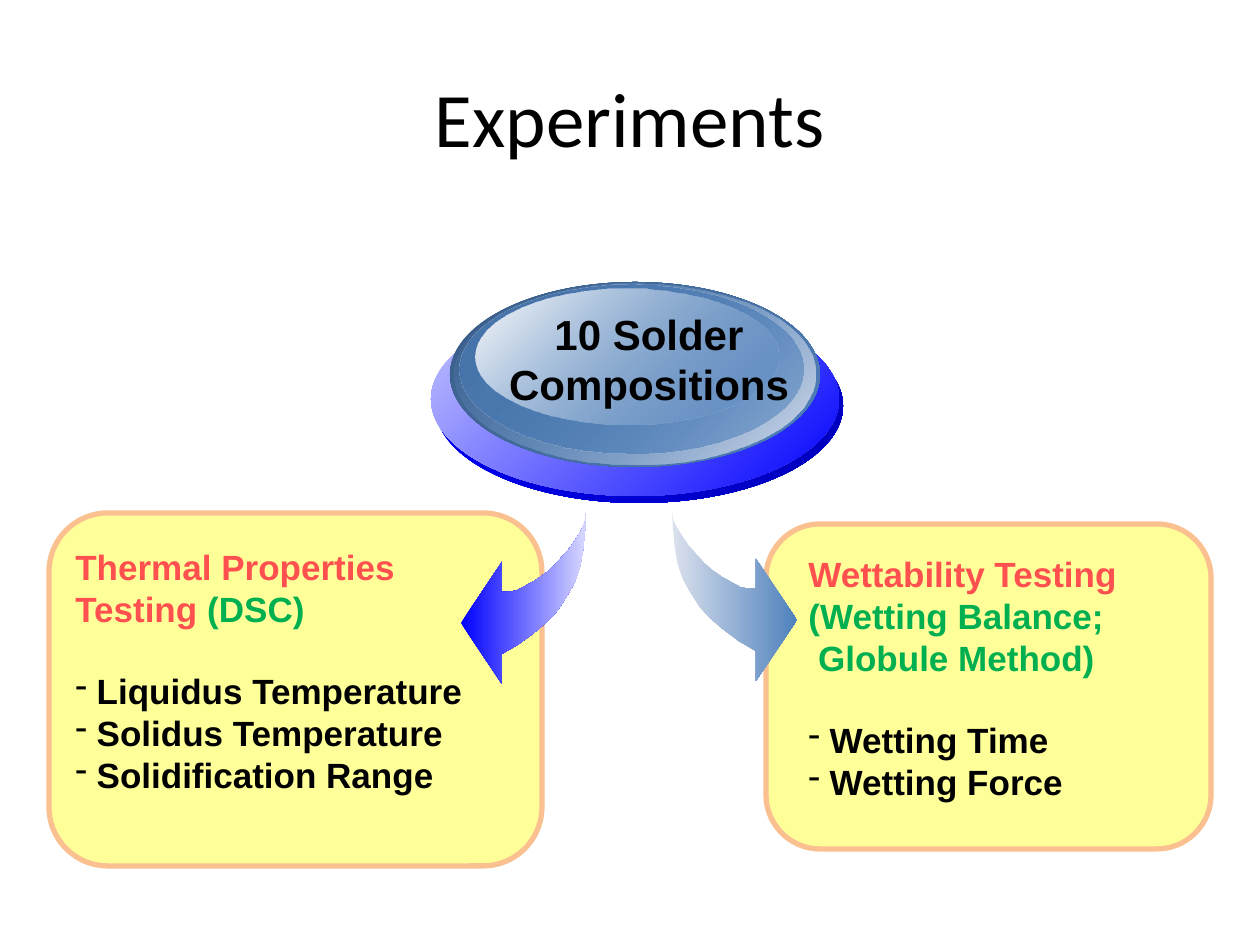
from lxml.etree import SubElement
from pptx import Presentation
from pptx.dml.color import RGBColor
from pptx.enum.shapes import MSO_SHAPE
from pptx.enum.text import MSO_ANCHOR, PP_ALIGN
from pptx.oxml.ns import qn
from pptx.util import Emu, Pt

BLACK = RGBColor(0, 0, 0)
RED = RGBColor(0xFF, 0x50, 0x50)
GREEN = RGBColor(0, 0xB0, 0x50)
YELLOW = RGBColor(0xFF, 0xFF, 0x99)
PEACH = RGBColor(0xFA, 0xC0, 0x90)
BLUE = RGBColor(0, 0, 0xFF)
NAVY = RGBColor(0, 0, 0xBA)
LILAC = RGBColor(0xC6, 0xC6, 0xFF)
PALE = RGBColor(0xD8, 0xD8, 0xFF)
STEEL = RGBColor(0x4F, 0x81, 0xBD)
SLATE = RGBColor(0x39, 0x5C, 0x87)
DENIM = RGBColor(0x47, 0x75, 0xAB)
MIST = RGBColor(0xDB, 0xE1, 0xED)
FOG = RGBColor(0xD7, 0xDE, 0xEB)
WHITE = RGBColor(0xFF, 0xFF, 0xFF)

TITLE = "Experiments"
HUB = ["10 Solder", "Compositions"]
PANELS = [
    {"frame": (49, 513, 493, 353), "text": (63, 539, 451, 299),
     "heads": [[("Thermal Properties Testing ", RED), ("(DSC)", GREEN)]],
     "items": ["Liquidus Temperature", "Solidus Temperature",
               "Solidification Range"]},
    {"frame": (766, 524, 445, 325), "text": (796, 546, 396, 276),
     "heads": [[("Wettability Testing", RED)],
               [("(Wetting Balance; \v Globule Method)", GREEN)]],
     "items": ["Wetting Time", "Wetting Force"]},
]
DISCS = [
    ((435, 309, 408, 194), (BLUE, 100), (NAVY, 100)),
    ((431, 302, 408, 194), (LILAC, 100), (BLUE, 100)),
    ((450, 282, 370, 185), (SLATE, 100), (STEEL, 100)),
    ((455, 284, 360, 180), (STEEL, 0), (FOG, 100)),
    ((459, 285, 344, 169), (DENIM, 100), (STEEL, 48)),
    ((476, 289, 302, 136), (WHITE, 100), (STEEL, 38)),
]
CURVE = [
    (0, 0), (1, 19), (3, 38), (6, 54), (11, 69), (19, 83), (28, 97),
    (38, 108), (52, 120), (67, 131), (84, 141), (84, 171), (125, 110),
    (84, 49), (84, 79), (77, 79), (68, 77), (59, 72), (50, 67), (40, 60),
    (32, 53), (24, 44), (16, 35), (10, 26), (5, 18), (1, 9),
]
ARROWS = [
    (586, 513, -1, (BLUE, 100), (PALE, 100)),
    (672, 510, 1, (MIST, 100), (STEEL, 100)),
]


def px(n):
    return Emu(round(n * 914400 / 126))


def place(box):
    return [px(n) for n in box]


def blend(shape, start, end, angle):
    shape.shadow.inherit = False
    shape.line.fill.background()
    shape.fill.gradient()
    shape.fill.gradient_angle = -angle % 360
    stops = shape.fill.gradient_stops
    for stop, spot, (color, alpha) in zip(stops, (0, 1), (start, end)):
        stop.position = spot
        stop.color.rgb = color
    tags = shape.element.spPr.iter(qn("a:srgbClr"))
    for tag, (_, alpha) in zip(tags, (start, end)):
        if alpha < 100:
            SubElement(tag, qn("a:alpha"), val=str(alpha * 1000))


def style(para, size):
    para.font.name = "Arial"
    para.font.size = Pt(size)
    para.font.bold = True


def write(frame, lines, size):
    for i, runs in enumerate(lines):
        para = frame.paragraphs[0] if i == 0 else frame.add_paragraph()
        style(para, size)
        for text, color in runs:
            for j, part in enumerate(text.split("\v")):
                if j:
                    para.add_line_break()
                run = para.add_run()
                run.text = part
                run.font.color.rgb = color
    return frame.paragraphs


def dash(para):
    props = para._p.get_or_add_pPr()
    props.set("marL", "0")
    props.set("indent", "0")
    SubElement(props, qn("a:buFontTx"))
    SubElement(props, qn("a:buChar"), char="-")


def panel(shapes, data):
    frame = shapes.add_shape(MSO_SHAPE.ROUNDED_RECTANGLE, *place(data["frame"]))
    frame.shadow.inherit = False
    frame.fill.solid()
    frame.fill.fore_color.rgb = YELLOW
    frame.line.color.rgb = PEACH
    frame.line.width = Pt(3)

    box = shapes.add_textbox(*place(data["text"]))
    box.fill.solid()
    box.fill.fore_color.rgb = YELLOW
    box.text_frame.word_wrap = True
    heads = data["heads"]
    lines = heads + [[(" " + item, BLACK)] for item in data["items"]]
    items = write(box.text_frame, lines, 20)[len(heads):]
    items[0].space_before = Pt(23)
    for para in items:
        dash(para)


def arrow(shapes, left, top, side, start, end):
    points = [(px(left + side * x), px(top + y)) for x, y in CURVE]
    path = shapes.build_freeform(*points[0])
    path.add_line_segments(points[1:], close=True)
    blend(path.convert_to_shape(), start, end, 0)


def hub(shapes):
    for box, start, end in DISCS:
        disc = shapes.add_shape(MSO_SHAPE.OVAL, *place(box))
        blend(disc, start, end, 45)
    label = shapes.add_textbox(*place((495, 302, 308, 115)))
    label.text_frame.word_wrap = False
    for para in write(label.text_frame, [[(t, BLACK)] for t in HUB], 24):
        para.alignment = PP_ALIGN.CENTER


def main():
    deck = Presentation()
    deck.slide_width, deck.slide_height = px(1260), px(945)
    slide = deck.slides.add_slide(deck.slide_layouts[5])
    shapes = slide.shapes
    title = shapes.title
    title.left, title.top, title.width, title.height = place((63, 38, 1134, 158))
    title.text_frame.text = TITLE
    title.text_frame.vertical_anchor = MSO_ANCHOR.MIDDLE
    para = title.text_frame.paragraphs[0]
    para.alignment = PP_ALIGN.CENTER
    para.font.name = "Calibri"
    para.font.size = Pt(44)
    para.font.color.rgb = BLACK

    left, right = PANELS
    panel(shapes, left)
    arrow(shapes, *ARROWS[0])
    hub(shapes)
    panel(shapes, right)
    arrow(shapes, *ARROWS[1])
    deck.save("out.pptx")


if __name__ == "__main__":
    main()
